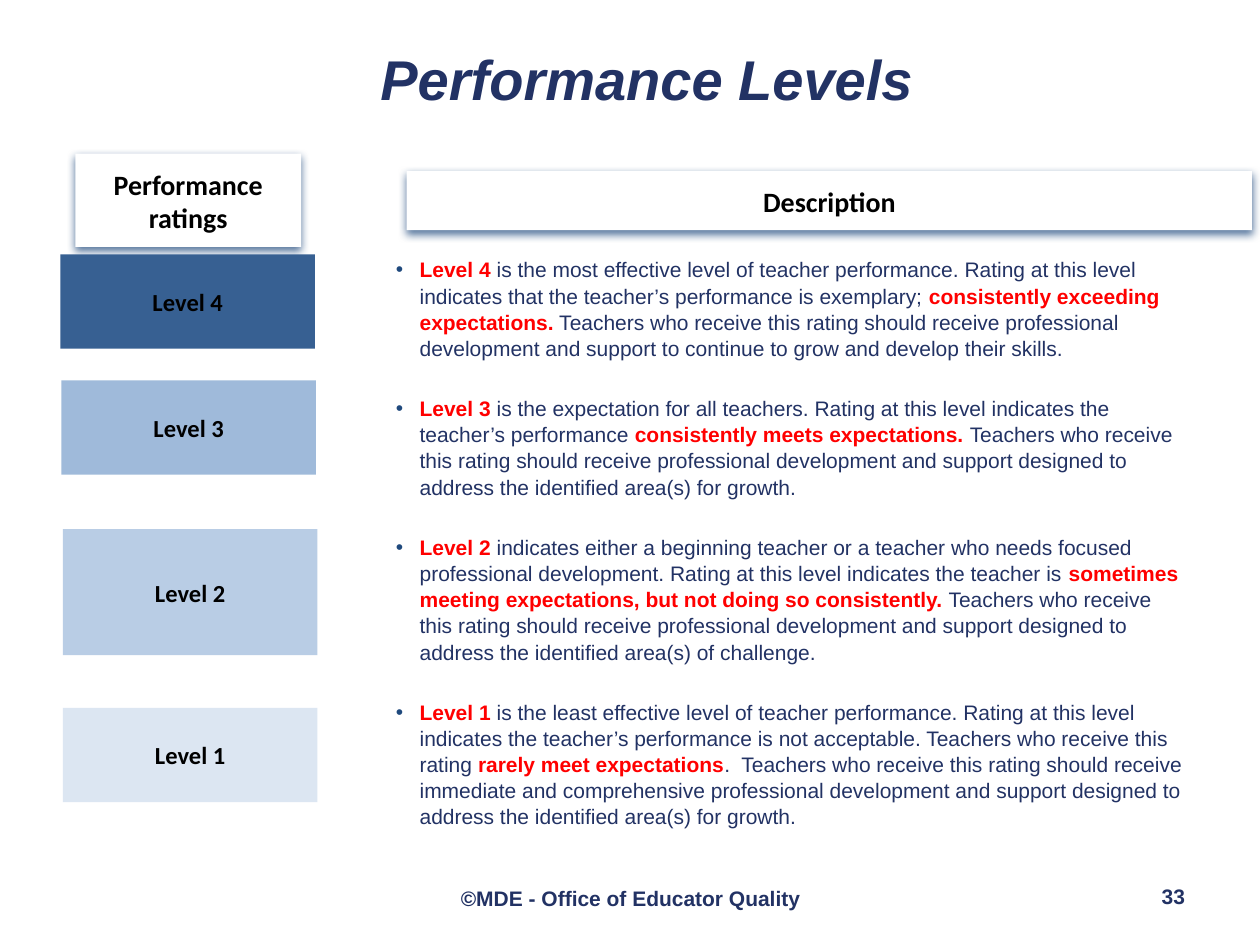
from lxml import etree
from pptx import Presentation
from pptx.dml.color import RGBColor
from pptx.enum.shapes import MSO_SHAPE
from pptx.enum.text import MSO_ANCHOR, PP_ALIGN
from pptx.oxml import parse_xml
from pptx.oxml.ns import qn
from pptx.util import Cm, Pt

RECT = MSO_SHAPE.RECTANGLE
TOP, MIDDLE, BOTTOM = MSO_ANCHOR.TOP, MSO_ANCHOR.MIDDLE, MSO_ANCHOR.BOTTOM
LEFT, CENTER, RIGHT = PP_ALIGN.LEFT, PP_ALIGN.CENTER, PP_ALIGN.RIGHT
NS = 'xmlns:a="http://schemas.openxmlformats.org/drawingml/2006/main"'
COLORS = {
    "navy": "223264", "red": "FF0000", "black": "000000", "white": "FFFFFF",
    "bullet": "1F497D", "level4": "376092", "level3": "95B3D7",
    "level2": "B9CDE5", "level1": "DCE6F2",
}


def add_run(p, text, size, color, bold=True, font="Arial"):
    r = p.add_run()
    r.text = text
    r.font.name, r.font.size, r.font.bold = font, Pt(size), bold
    r.font.color.rgb = RGBColor.from_string(COLORS[color])
    return r


def add_box(box, fill, text, size, anchor, wrap):
    sp = s.shapes.add_shape(RECT, *[Cm(v) for v in box])
    sp.shadow.inherit = False
    sp.fill.solid()
    sp.fill.fore_color.rgb = RGBColor.from_string(COLORS[fill])
    sp.line.fill.background()
    tf = sp.text_frame
    tf.word_wrap, tf.vertical_anchor = wrap, anchor
    tf.margin_left = tf.margin_right = tf.margin_top = tf.margin_bottom = Cm(0.25)
    tf.paragraphs[0].alignment = CENTER
    add_run(tf.paragraphs[0], text, size, "black", font="Calibri")
    return sp


prs = Presentation()
prs.slide_width, prs.slide_height = Cm(25.4), Cm(19.05)
s = prs.slides.add_slide(prs.slide_layouts[6])

# Title, footer and slide number
for box, text, size, align, anchor, italic in [
    ((7.42, 0.15, 11.43, 2.97), "Performance Levels", 32, LEFT, TOP, True),
    ((8.69, 17.4, 8.05, 1.4), "©MDE - Office of Educator Quality", 12, CENTER, MIDDLE, False),
    ((18.21, 17.37, 5.93, 1.4), "33", 12, RIGHT, MIDDLE, False),
]:
    tf = s.shapes.add_textbox(*[Cm(v) for v in box]).text_frame
    tf.word_wrap, tf.vertical_anchor = True, anchor
    if anchor == TOP:
        tf.margin_top = Cm(0.74)
    p = tf.paragraphs[0]
    p.alignment = align
    add_run(p, text, size, "navy").font.italic = italic

# Level descriptions: red bold and plain navy runs alternate
descriptions = [
    ("Level 4 ",
     "is the most effective level of teacher performance. Rating at this level indicates "
     "that the teacher’s performance is exemplary; ",
     "consistently exceeding expectations.",
     " Teachers who receive this rating should receive professional development and support "
     "to continue to grow and develop their skills."),
    ("Level 3 ",
     "is the expectation for all teachers. Rating at this level indicates the teacher’s performance ",
     "consistently meets expectations. ",
     "Teachers who receive this rating should receive professional development and support "
     "designed to address the identified area(s) for growth."),
    ("Level 2 ",
     "indicates either a beginning teacher or a teacher who needs focused professional "
     "development. Rating at this level indicates the teacher is ",
     "sometimes meeting expectations, but not doing so consistently.",
     " Teachers who receive this rating should receive professional development and support "
     "designed to address the identified area(s) of challenge."),
    ("Level 1 ",
     "is the least effective level of teacher performance. Rating at this level indicates the "
     "teacher’s performance is not acceptable. Teachers who receive this rating ",
     "rarely meet expectations",
     ".  Teachers who receive this rating should receive immediate and comprehensive professional "
     "development and support designed to address the identified area(s) for growth."),
]
tf = s.shapes.add_textbox(Cm(7.42), Cm(4.45), Cm(16.71), Cm(12.57)).text_frame
tf.word_wrap = True
tf.margin_top = Cm(0.71)
for i, parts in enumerate(descriptions):
    p = tf.add_paragraph() if i else tf.paragraphs[0]
    pPr = p._p.get_or_add_pPr()
    pPr.set("marL", str(Cm(0.79)))
    pPr.set("indent", str(-Cm(0.48)))
    pPr.append(parse_xml(f'<a:buClr {NS}><a:srgbClr val="{COLORS["bullet"]}"/></a:buClr>'))
    pPr.append(parse_xml(f'<a:buFont {NS} typeface="Arial"/>'))
    pPr.append(parse_xml(f'<a:buChar {NS} char="•"/>'))
    p.line_spacing = 1.04
    p.space_before = Pt(19.4 if i else 0)
    for j, text in enumerate(parts):
        key = j % 2 == 0
        add_run(p, text, 12, "red" if key else "navy", bold=key)

# Column headings with a soft shadow
for box, text in [
    ((8.2, 3.45, 17.04, 1.19), "Description"),
    ((1.52, 3.1, 4.55, 1.88), "Performance ratings"),
]:
    sp = add_box(box, "white", text, 16, BOTTOM, True)
    effects = sp._element.spPr.find(qn("a:effectLst"))
    effects.append(parse_xml(
        f'<a:outerShdw {NS} blurRad="{Pt(5)}" dist="{Pt(2.1)}" dir="5400000" rotWithShape="0">'
        f'<a:srgbClr val="{COLORS["bullet"]}"><a:alpha val="75000"/></a:srgbClr></a:outerShdw>'))

# Rating boxes
for level, left, top, height in [
    (4, 1.22, 5.13, 1.9), (3, 1.24, 7.67, 1.9), (2, 1.27, 10.67, 2.54), (1, 1.27, 14.27, 1.9),
]:
    sp = add_box((left, top, 5.13, height), f"level{level}", f"Level {level}", 14, MIDDLE, False)
    if level == 3:
        color = sp._element.spPr.find(qn("a:solidFill"))[0]
        etree.SubElement(color, qn("a:alpha")).set("val", "90000")

prs.save("out.pptx")
